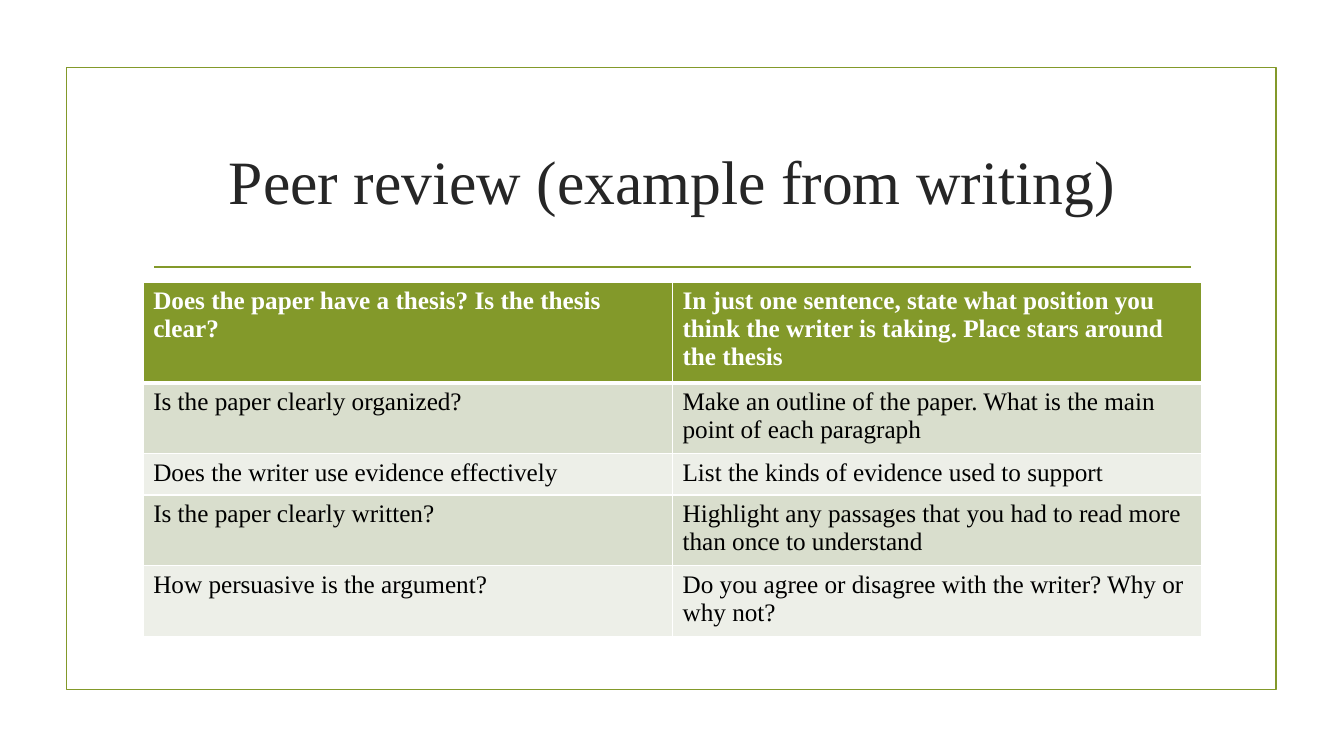
import dataclasses

import lxml.etree
import pptx
import pptx.dml.color
import pptx.enum.shapes
import pptx.enum.text
import pptx.oxml
import pptx.oxml.ns
import pptx.util
from pptx.util import Inches


@dataclasses.dataclass(frozen=True)
class Theme:
    """Hold the colours, font and sizes of the slide."""

    accent: str = "83992A"
    title: str = "262626"
    body: str = "000000"
    white: str = "FFFFFF"
    bands: tuple = ("EDEFE8", "D9DECD")
    font: str = "Times New Roman"
    title_size: int = 44
    table_size: int = 18
    rule_width: float = 1.25
    border_width: int = 1
    header_border_width: int = 3


THEME = Theme()
TITLE = "Peer review (example from writing)"
REVIEW_ROWS = [
    ("Does the paper have a thesis? Is the thesis clear?",
     "In just one sentence, state what position you think the writer is taking. "
     "Place stars around the thesis"),
    ("Is the paper clearly organized?",
     "Make an outline of the paper. What is the main point of each paragraph"),
    ("Does the writer use evidence effectively",
     "List the kinds of evidence used to support"),
    ("Is the paper clearly written?",
     "Highlight any passages that you had to read more than once to understand"),
    ("How persuasive is the argument?",
     "Do you agree or disagree with the writer? Why or why not?"),
]


def color(value):
    """Return the colour for a hexadecimal value."""
    return pptx.dml.color.RGBColor.from_string(value)


def style_font(paragraph, size, value, bold=False):
    """Format every run of a paragraph."""
    for run in paragraph.runs:
        run.font.name = THEME.font
        run.font.size = pptx.util.Pt(size)
        run.font.color.rgb = color(value)
        run.font.bold = bold


def style_line(line):
    """Give an outline the accent colour and width."""
    line.color.rgb = color(THEME.accent)
    line.width = pptx.util.Pt(THEME.rule_width)


def add_frame(slide, left, top, width, height):
    """Draw the border around the content and the rule below the title."""
    frame = slide.shapes.add_shape(
        pptx.enum.shapes.MSO_SHAPE.RECTANGLE,
        Inches(left), Inches(top), Inches(width), Inches(height))
    frame.shadow.inherit = False
    frame.fill.background()
    style_line(frame.line)
    rule_top = Inches(top + 1.98)
    rule = slide.shapes.add_connector(
        pptx.enum.shapes.MSO_CONNECTOR.STRAIGHT,
        Inches(left + 0.87), rule_top, Inches(left + width - 0.85), rule_top)
    style_line(rule.line)
    lxml.etree.SubElement(rule._element.spPr, pptx.oxml.ns.qn("a:effectLst"))


def add_title(slide, left, top, width, height):
    """Place the centred title in its box."""
    box = slide.shapes.add_textbox(
        Inches(left), Inches(top), Inches(width), Inches(height))
    frame = box.text_frame
    frame.word_wrap = True
    frame.vertical_anchor = pptx.enum.text.MSO_ANCHOR.MIDDLE
    frame.text = TITLE
    paragraph = frame.paragraphs[0]
    paragraph.alignment = pptx.enum.text.PP_ALIGN.CENTER
    style_font(paragraph, THEME.title_size, THEME.title)


def add_borders(cell, top_width, bottom_width):
    """Draw white borders on the four sides of a cell."""
    widths = {"lnL": THEME.border_width, "lnR": THEME.border_width,
              "lnT": top_width, "lnB": bottom_width}
    properties = cell._tc.get_or_add_tcPr()
    for side, width in widths.items():
        properties.append(pptx.oxml.parse_xml(
            f'<a:{side} {pptx.oxml.ns.nsdecls("a")} w="{pptx.util.Pt(width)}">'
            f'<a:solidFill><a:srgbClr val="{THEME.white}"/></a:solidFill></a:{side}>'))


def add_review_table(slide, left, top, width, row_height):
    """Place the table of review questions and tasks."""
    table = slide.shapes.add_table(
        len(REVIEW_ROWS), 2, Inches(left), Inches(top), Inches(width),
        Inches(row_height * len(REVIEW_ROWS))).table
    for row_index, texts in enumerate(REVIEW_ROWS):
        header = row_index == 0
        top_width = THEME.header_border_width if row_index == 1 else THEME.border_width
        bottom_width = THEME.header_border_width if header else THEME.border_width
        for column_index, text in enumerate(texts):
            cell = table.cell(row_index, column_index)
            add_borders(cell, top_width, bottom_width)
            cell.fill.solid()
            cell.fill.fore_color.rgb = color(
                THEME.accent if header else THEME.bands[row_index % 2])
            cell.text_frame.text = text
            style_font(cell.text_frame.paragraphs[0], THEME.table_size,
                       THEME.white if header else THEME.body, header)


def main():
    """Build and save the presentation."""
    presentation = pptx.Presentation()
    presentation.slide_width = Inches(13.33)
    presentation.slide_height = Inches(7.5)
    slide = presentation.slides.add_slide(presentation.slide_layouts[6])
    add_frame(slide, 0.66, 0.67, 12, 6.17)
    add_title(slide, 1.42, 1.07, 10.5, 1.43)
    add_review_table(slide, 1.42, 2.8, 10.5, 0.41)
    presentation.save("out.pptx")


if __name__ == "__main__":
    main()
